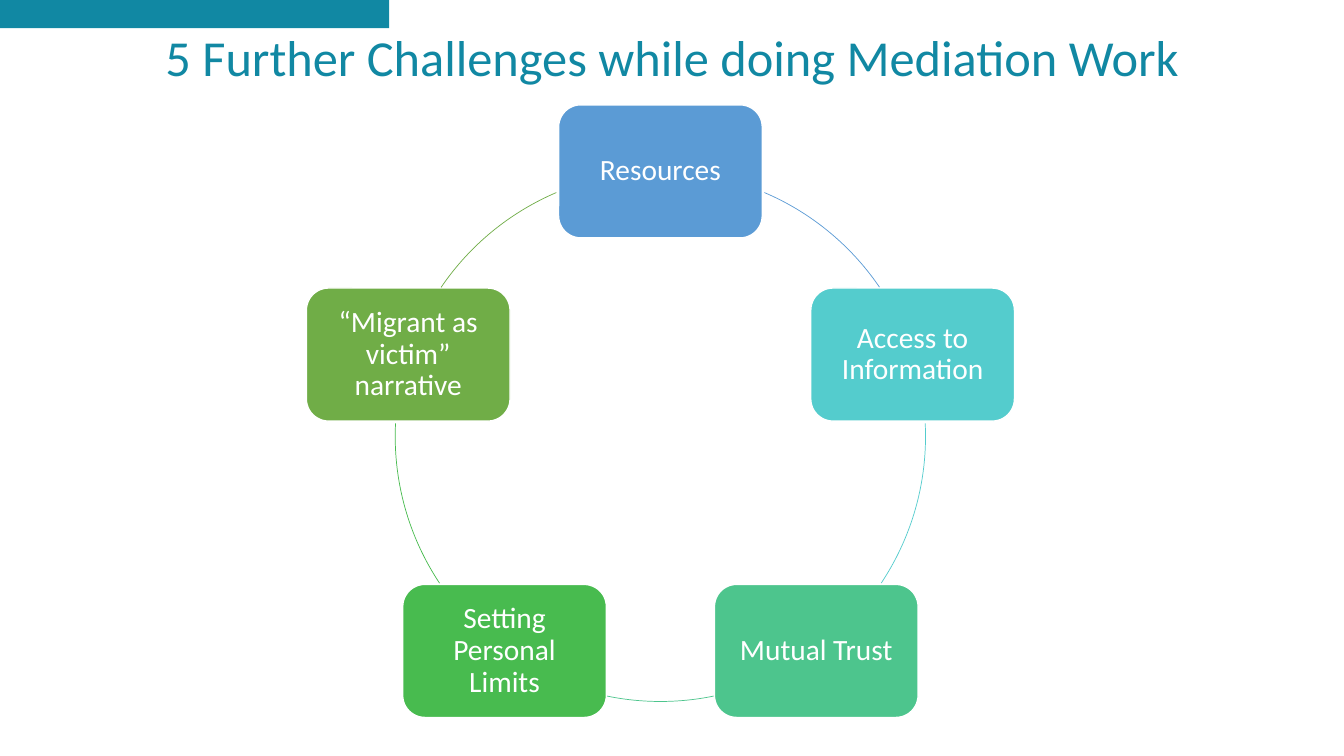
from dataclasses import dataclass
from math import cos, radians, sin

from pptx import Presentation
from pptx.dml.color import RGBColor
from pptx.enum.shapes import MSO_SHAPE as Preset
from pptx.enum.text import MSO_ANCHOR as Anchor, MSO_AUTO_SIZE as AutoSize, PP_ALIGN as Align
from pptx.util import Inches, Pt

TEAL, WHITE = "1188A3", "FFFFFF"
CENTER_X, CENTER_Y, RADIUS = 6.55, 4.33, 2.63
NODE_W, NODE_H = 2.02, 1.32


@dataclass
class Challenge:
    label: str
    color: str
    arc_start: float
    arc_end: float


CHALLENGES = [
    Challenge("Resources", "5B9BD5", 293.1, 325.8),
    Challenge("Access to Information", "54CCCD", 357.2, 33.6),
    Challenge("Mutual Trust", "4DC58D", 78.4, 101.6),
    Challenge("Setting Personal Limits", "48BB4F", 146.4, 182.8),
    Challenge("“Migrant as victim” narrative", "70AD47", 214.2, 246.9),
]


def rgb(value: str) -> RGBColor:
    return RGBColor.from_string(value)


def add_preset(slide, preset, left: float, top: float, width: float, height: float):
    shape = slide.shapes.add_shape(
        preset, Inches(left), Inches(top), Inches(width), Inches(height))
    shape.shadow.inherit = False
    return shape


def paint(shape, color: str) -> None:
    shape.fill.solid()
    shape.fill.fore_color.rgb = rgb(color)


def outline(shape, color: str, width: float) -> None:
    shape.line.color.rgb = rgb(color)
    shape.line.width = Pt(width)


def write(shape, text: str, size: float, color: str, frame_format: dict) -> None:
    frame = shape.text_frame
    frame.text = text
    for name, value in frame_format.items():
        setattr(frame, name, value)
    paragraph = frame.paragraphs[0]
    paragraph.alignment = Align.CENTER
    paragraph.line_spacing = 0.9
    font = paragraph.runs[0].font
    for name, value in {"name": "Calibri", "size": Pt(size)}.items():
        setattr(font, name, value)
    font.color.rgb = rgb(color)


def add_header(slide) -> None:
    band = add_preset(slide, Preset.RECTANGLE, 0, 0, 3.86, 0.28)
    paint(band, TEAL)
    band.line.fill.background()
    heading = slide.shapes.title
    place = {"left": 0.77, "top": 0.28, "width": 11.8, "height": 1.18}
    for name, value in place.items():
        setattr(heading, name, Inches(value))
    write(heading, "5 Further Challenges while doing Mediation Work", 36, TEAL,
          {"vertical_anchor": Anchor.TOP, "word_wrap": True, "auto_size": AutoSize.NONE})


def add_challenge(slide, index: int, challenge: Challenge) -> None:
    angle = radians(360 / len(CHALLENGES) * index - 90)
    node = add_preset(slide, Preset.ROUNDED_RECTANGLE,
                      CENTER_X + RADIUS * cos(angle) - NODE_W / 2,
                      CENTER_Y + RADIUS * sin(angle) - NODE_H / 2, NODE_W, NODE_H)
    paint(node, challenge.color)
    outline(node, WHITE, 1)
    margins = {f"margin_{side}": Inches(0.09) for side in ("left", "top", "right", "bottom")}
    write(node, challenge.label, 21, WHITE,
          {"vertical_anchor": Anchor.MIDDLE, "word_wrap": True, **margins})

    arc = add_preset(slide, Preset.ARC, CENTER_X - RADIUS, CENTER_Y - RADIUS,
                     2 * RADIUS, 2 * RADIUS)
    for position, degrees in enumerate((challenge.arc_start, challenge.arc_end)):
        arc.adjustments[position] = degrees * 0.6
    arc.fill.background()
    outline(arc, challenge.color, 0.5)


def main() -> None:
    deck = Presentation()
    deck.slide_width, deck.slide_height = Inches(13.33), Inches(7.5)
    slide = deck.slides.add_slide(deck.slide_layouts[5])
    add_header(slide)
    for index, challenge in enumerate(CHALLENGES):
        add_challenge(slide, index, challenge)
    deck.save("out.pptx")


if __name__ == "__main__":
    main()
